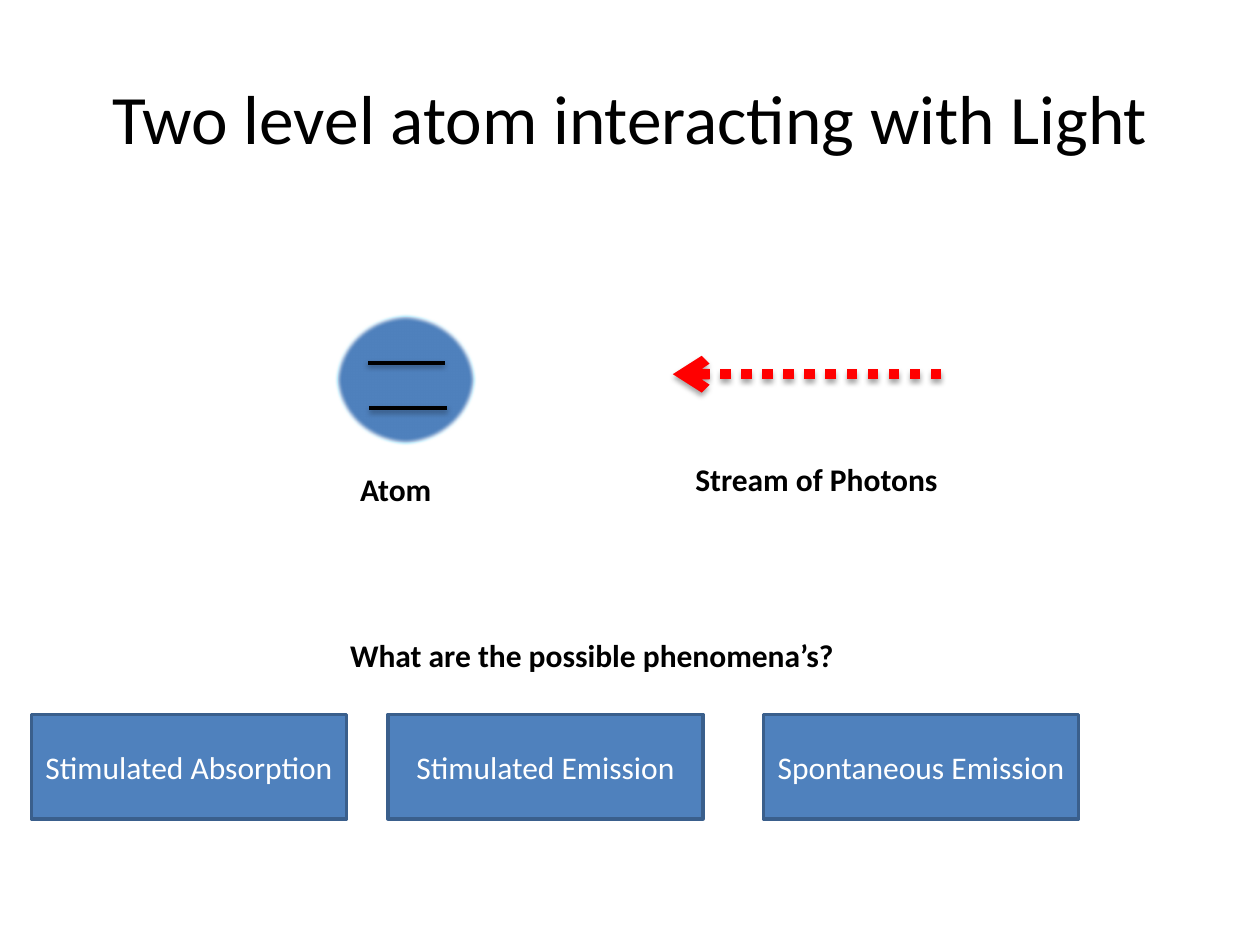
from lxml import etree
from pptx import Presentation
from pptx.dml.color import RGBColor
from pptx.enum.dml import MSO_LINE
from pptx.enum.shapes import MSO_CONNECTOR as CONN, MSO_SHAPE as SHAPE
from pptx.enum.text import MSO_ANCHOR, MSO_AUTO_SIZE, PP_ALIGN
from pptx.oxml import parse_xml
from pptx.oxml.ns import nsdecls, qn
from pptx.util import Inches, Pt

BLACK = RGBColor(0x00, 0x00, 0x00)
WHITE = RGBColor(0xFF, 0xFF, 0xFF)
RED = RGBColor(0xFF, 0x00, 0x00)
BLUE = RGBColor(0x4F, 0x81, 0xBD)
EDGE = RGBColor(0x3A, 0x5F, 0x8C)
CYAN = RGBColor(0x00, 0xB0, 0xF0)


def write(tf, text, color, **fmt):
    p = tf.paragraphs[0]
    r = p.add_run()
    r.text = text
    r.font.color.rgb = color
    for name, value in {"name": "Calibri", "size": Pt(18), **fmt}.items():
        setattr(r.font, name, value)
    return p


def add_filled(kind, x, y, w, h, edge):
    sp = s.shapes.add_shape(kind, Inches(x), Inches(y), Inches(w), Inches(h))
    sp.shadow.inherit = False
    sp.fill.solid()
    sp.fill.fore_color.rgb = BLUE
    sp.line.color.rgb = edge
    sp.line.width = Pt(2)
    return sp


prs = Presentation()
prs.slide_width, prs.slide_height = Inches(10), Inches(7.5)
s = prs.slides.add_slide(prs.slide_layouts[5])

title = s.shapes.title
title.left, title.top = Inches(0.5), Inches(0.3)
title.width, title.height = Inches(9), Inches(1.25)
title.text_frame.vertical_anchor = MSO_ANCHOR.MIDDLE
write(title.text_frame, "Two level atom interacting with Light", BLACK,
      size=Pt(39.6)).alignment = PP_ALIGN.CENTER

atom = add_filled(SHAPE.OVAL, 2.67, 2.5, 1.1, 1.02, CYAN)
effects = atom._element.spPr.find(qn("a:effectLst"))
etree.SubElement(effects, qn("a:softEdge"), rad=str(Pt(2.5)))

lines = [
    (7.47, 5.34, 2.97, RED, 6, 1.8, 35),
    (2.92, 3.53, 2.88, BLACK, 2, 1.6, 38),
    (2.93, 3.55, 3.24, BLACK, 2, 1.6, 38),
]
for x1, x2, y, color, width, dist, alpha in lines:
    ln = s.shapes.add_connector(CONN.STRAIGHT, Inches(x1), Inches(y), Inches(x2), Inches(y))
    ln.line.color.rgb = color
    ln.line.width = Pt(width)
    if color == RED:
        ln.line.dash_style = MSO_LINE.ROUND_DOT
        etree.SubElement(ln.line._get_or_add_ln(), qn("a:tailEnd"), type="arrow")
    ln._element.spPr.append(parse_xml(
        f'<a:effectLst {nsdecls("a")}><a:outerShdw blurRad="{Pt(3.1)}" dist="{Pt(dist)}" '
        f'dir="5400000" rotWithShape="0"><a:srgbClr val="000000">'
        f'<a:alpha val="{alpha * 1000}"/></a:srgbClr></a:outerShdw></a:effectLst>'))

labels = [
    ("Atom", 2.76, 3.68, 0.77),
    ("Stream of Photons", 5.42, 3.6, 2.14),
    ("What are the possible phenomena’s?", 2.68, 5, 4.07),
]
for text, x, y, w in labels:
    tf = s.shapes.add_textbox(Inches(x), Inches(y), Inches(w), Inches(0.4)).text_frame
    tf.word_wrap = False
    tf.auto_size = MSO_AUTO_SIZE.SHAPE_TO_FIT_TEXT
    write(tf, text, BLACK, bold=True)

phenomena = [
    ("Stimulated Absorption", 0.25),
    ("Stimulated Emission", 3.08),
    ("Spontaneous Emission", 6.06),
]
for text, x in phenomena:
    tf = add_filled(SHAPE.RECTANGLE, x, 5.67, 2.5, 0.83, EDGE).text_frame
    tf.vertical_anchor = MSO_ANCHOR.MIDDLE
    write(tf, text, WHITE).alignment = PP_ALIGN.CENTER

prs.save("out.pptx")
